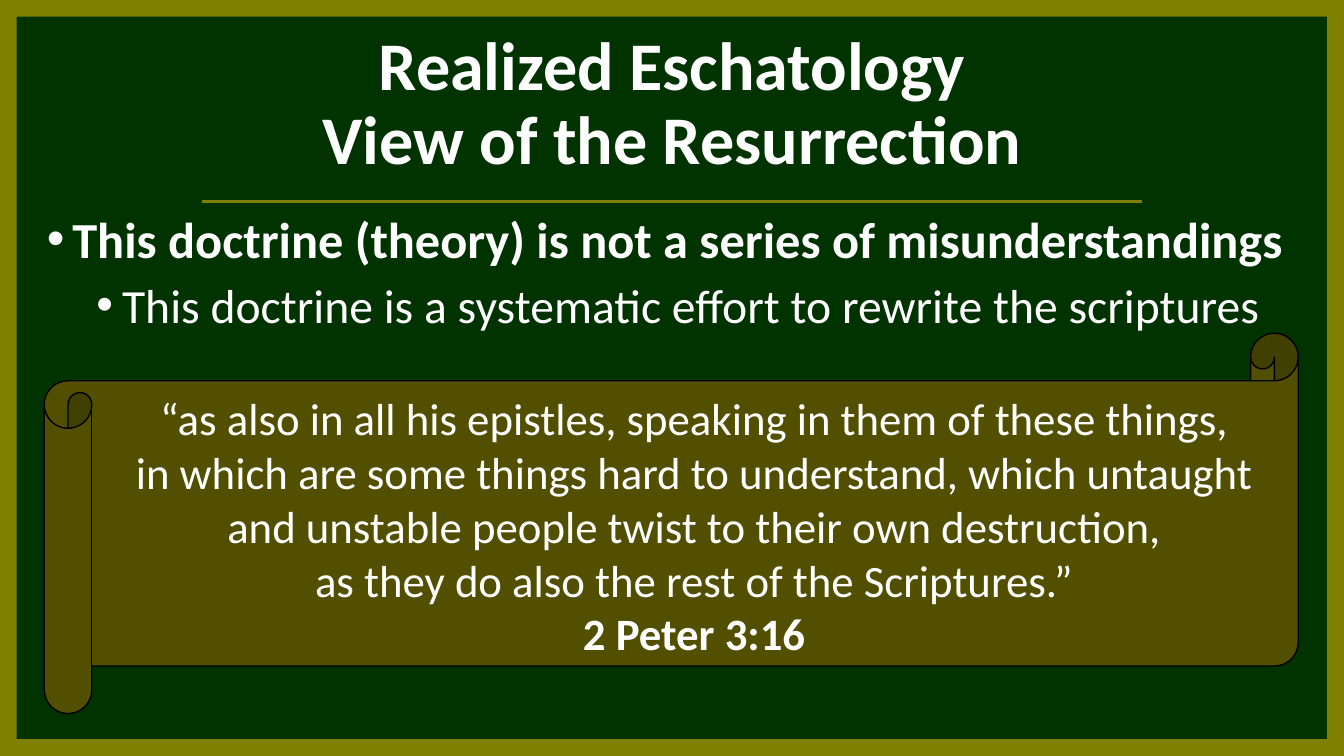
from lxml import etree
from pptx import Presentation
from pptx.dml.color import RGBColor
from pptx.enum.shapes import MSO_CONNECTOR, MSO_SHAPE
from pptx.enum.text import MSO_ANCHOR, PP_ALIGN
from pptx.oxml.ns import qn
from pptx.util import Inches, Pt

CENTER, LEFT = PP_ALIGN.CENTER, PP_ALIGN.LEFT
TOP, MIDDLE = MSO_ANCHOR.TOP, MSO_ANCHOR.MIDDLE
STRAIGHT = MSO_CONNECTOR.STRAIGHT
RECT, SCROLL = MSO_SHAPE.RECTANGLE, MSO_SHAPE.HORIZONTAL_SCROLL

FONT = "Calibri"
COLORS = {"bg": "003300", "text": "FFFFFF", "olive": "808000",
          "scroll": "525000", "outline": "000000"}
W = 10
H = W * 9 / 16
EDGE = W / 80

TITLE = "Realized Eschatology\vView of the Resurrection"
# text, size, bold, left indent, space before
BULLETS = [
    ("This doctrine (theory) is not a series of misunderstandings", 27, True, 0.19, 0),
    ("This doctrine is a systematic effort to rewrite the scriptures", 25.5, False, 0.56, 3.8),
]
HANGING = 0.19
QUOTE = ("“as also in all his epistles, speaking in them of these things,\v"
         "in which are some things hard to understand, which untaught "
         "and unstable people twist to their own destruction,\v"
         "as they do also the rest of the Scriptures.”\v")
REFERENCE = "2 Peter 3:16"
BORDERS = [(0, 0, EDGE, H), (W - EDGE, 0, EDGE, H),
           (0.08, 0, 9.83, EDGE), (0, H - EDGE, 9.92, EDGE)]


def rgb(name):
    return RGBColor.from_string(COLORS[name])


def add_text_box(s, box, anchor):
    tf = s.shapes.add_textbox(*map(Inches, box)).text_frame
    tf.word_wrap = True
    tf.vertical_anchor = anchor
    return tf


def style(p, size, bold, align):
    p.alignment = align
    for r in p.runs:
        r.font.name = FONT
        r.font.size = Pt(size)
        r.font.bold = bold
        r.font.color.rgb = rgb("text")


def add_bullet(p, indent):
    pPr = p._p.get_or_add_pPr()
    pPr.set("marL", str(Inches(indent)))
    pPr.set("indent", str(-Inches(HANGING)))
    etree.SubElement(pPr, qn("a:buFont")).set("typeface", "Arial")
    etree.SubElement(pPr, qn("a:buChar")).set("char", "•")


def add_filled(s, kind, box, fill):
    sp = s.shapes.add_shape(kind, *map(Inches, box))
    sp.shadow.inherit = False
    sp.fill.solid()
    sp.fill.fore_color.rgb = rgb(fill)
    sp.line.fill.background()
    return sp


prs = Presentation()
prs.slide_width, prs.slide_height = Inches(W), Inches(H)
s = prs.slides.add_slide(prs.slide_layouts[6])
s.background.fill.solid()
s.background.fill.fore_color.rgb = rgb("bg")

p = add_text_box(s, (1.44, 0.19, 7.12, 1.19), MIDDLE).paragraphs[0]
p.text = TITLE
p.line_spacing = 0.9
style(p, 36.5, True, CENTER)

tf = add_text_box(s, (0.25, 1.5, 9.5, 2), TOP)
for i, (text, size, bold, indent, before) in enumerate(BULLETS):
    p = tf.add_paragraph() if i else tf.paragraphs[0]
    p.text = text
    p.level = i
    p.space_before = Pt(before)
    add_bullet(p, indent)
    style(p, size, bold, LEFT)

rule = s.shapes.add_connector(STRAIGHT, *map(Inches, (1.5, 1.5, 8.5, 1.5)))
rule.line.color.rgb = rgb("olive")
rule.line.width = Pt(2)
etree.SubElement(rule._element.spPr, qn("a:effectLst"))

scroll = add_filled(s, SCROLL, (0.33, 2.48, 9.33, 2.83), "scroll")
scroll.adjustments[0] = 0.125
scroll.line.color.rgb = rgb("outline")
scroll.line.width = Pt(0.75)

p = add_text_box(s, (0.83, 2.86, 8.67, 2.12), TOP).paragraphs[0]
p.text = QUOTE
p.add_run().text = REFERENCE
style(p, 24, False, CENTER)
p.runs[-1].font.bold = True

for box in BORDERS:
    add_filled(s, RECT, box, "olive")

prs.save("out.pptx")
